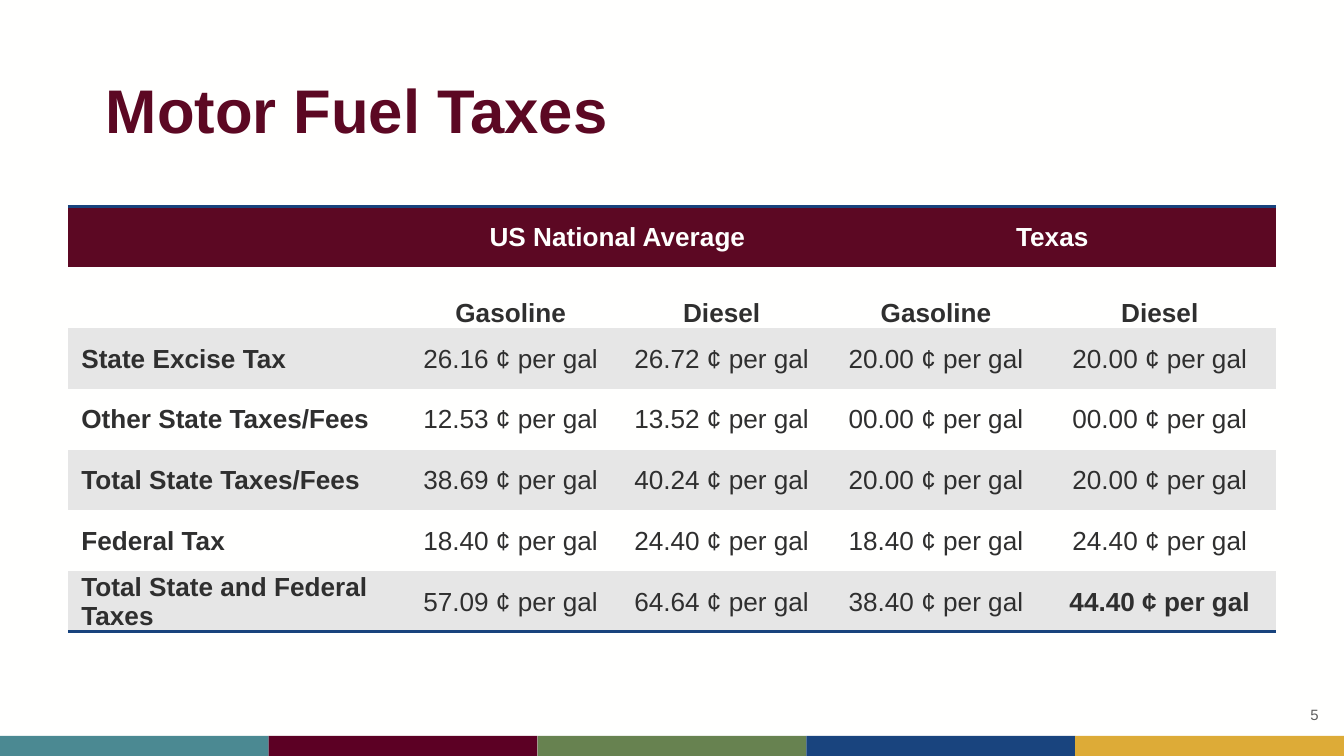
"""Build the Motor Fuel Taxes slide with its rate table and colour band."""
from dataclasses import dataclass
from typing import NamedTuple

from lxml import etree
from pptx import Presentation
from pptx.dml.color import RGBColor
from pptx.enum.shapes import MSO_SHAPE
from pptx.enum.text import MSO_ANCHOR, PP_ALIGN
from pptx.oxml.ns import qn
from pptx.slide import Slide
from pptx.table import _Cell
from pptx.text.text import TextFrame
from pptx.util import Emu, Inches, Pt

RECTANGLE = MSO_SHAPE.RECTANGLE
LEFT, CENTER, RIGHT = PP_ALIGN.LEFT, PP_ALIGN.CENTER, PP_ALIGN.RIGHT
MIDDLE, BOTTOM = MSO_ANCHOR.MIDDLE, MSO_ANCHOR.BOTTOM
WIDTH = Inches(10)
HEIGHT = Emu(WIDTH * 9 // 16)
PLAIN_TABLE = "{2D5ABB26-0587-4C30-8999-92F81FD0307C}"


@dataclass(frozen=True)
class Theme:
    font: str = "Arial"
    paper: str = "FFFFFE"
    maroon: str = "5C0823"
    ink: str = "2F2F2F"
    stripe: str = "E6E6E6"
    rule: str = "18437D"
    muted: str = "5E5E5E"
    band: tuple[str, ...] = ("4B8992", "5C0024", "678250", "19447E", "DDAB37")
    title_size: float = 33
    table_size: float = 14
    number_size: float = 8
    rule_width: float = 2


def share_of(length: int, percent: float) -> Emu:
    return Emu(round(length * percent / 100))


class Box(NamedTuple):
    """Left, top, width and height as percentages of the slide."""
    left: float
    top: float
    width: float
    height: float

    def emu(self) -> tuple[Emu, Emu, Emu, Emu]:
        return (share_of(WIDTH, self.left), share_of(HEIGHT, self.top),
                share_of(WIDTH, self.width), share_of(HEIGHT, self.height))


class TextStyle(NamedTuple):
    size: float
    color: str
    bold: bool = False
    align: PP_ALIGN = LEFT


class TaxRow(NamedTuple):
    label: str
    cents: tuple[str, ...]


THEME = Theme()
TITLE_BOX = Box(6.88, 5.33, 86.2, 19.4)
TABLE_BOX = Box(5.05, 27.35, 89.9, 56.2)
NUMBER_BOX = Box(76.6, 91.8, 22.5, 5.33)
BAND_HEIGHT = 2.67
COLUMN_SHARES = (25.2, 15.5, 15.9, 16, 17.3)
REGIONS = ("US National Average", "Texas")
FUELS = ("Gasoline", "Diesel")
TAXES = (
    TaxRow("State Excise Tax", ("26.16", "26.72", "20.00", "20.00")),
    TaxRow("Other State Taxes/Fees", ("12.53", "13.52", "00.00", "00.00")),
    TaxRow("Total State Taxes/Fees", ("38.69", "40.24", "20.00", "20.00")),
    TaxRow("Federal Tax", ("18.40", "24.40", "18.40", "24.40")),
    TaxRow("Total State and Federal Taxes", ("57.09", "64.64", "38.40", "44.40")),
)


def write(frame: TextFrame, text: str, style: TextStyle) -> None:
    paragraph = frame.paragraphs[0]
    paragraph.alignment = style.align
    run = paragraph.add_run()
    run.text = text
    run.font.name = THEME.font
    run.font.size = Pt(style.size)
    run.font.bold = style.bold
    run.font.color.rgb = RGBColor.from_string(style.color)


def fill_cell(cell: _Cell, color: str) -> None:
    cell.fill.solid()
    cell.fill.fore_color.rgb = RGBColor.from_string(color)


def write_cell(cell: _Cell, text: str, style: TextStyle,
               anchor: MSO_ANCHOR = MIDDLE) -> None:
    cell.vertical_anchor = anchor
    cell.margin_left = Inches(0.1 if style.align == LEFT else 0.01)
    cell.margin_right = cell.margin_top = Inches(0.01)
    cell.margin_bottom = 0
    write(cell.text_frame, text, style)


def rule_cell(cell: _Cell, edge: str) -> None:
    line = etree.Element(qn(f"a:{edge}"), w=str(Pt(THEME.rule_width)))
    fill = etree.SubElement(line, qn("a:solidFill"))
    etree.SubElement(fill, qn("a:srgbClr"), val=THEME.rule)
    cell._tc.get_or_add_tcPr().insert(0, line)


def draw_band(slide: Slide) -> None:
    share = 100 / len(THEME.band)
    for index, color in enumerate(THEME.band):
        box = Box(index * share, 100 - BAND_HEIGHT, share, BAND_HEIGHT)
        stripe = slide.shapes.add_shape(RECTANGLE, *box.emu())
        stripe.shadow.inherit = False
        stripe.fill.solid()
        stripe.fill.fore_color.rgb = RGBColor.from_string(color)
        stripe.line.fill.background()


def draw_title(slide: Slide) -> None:
    title = slide.shapes.title
    title.left, title.top, title.width, title.height = TITLE_BOX.emu()
    title.text_frame.vertical_anchor = MIDDLE
    write(title.text_frame, "Motor Fuel Taxes",
          TextStyle(THEME.title_size, THEME.maroon, bold=True))
    title.text_frame.paragraphs[0].line_spacing = 0.9


def draw_taxes(slide: Slide) -> None:
    row_count = len(TAXES) + 2
    frame = slide.shapes.add_table(row_count, len(COLUMN_SHARES), *TABLE_BOX.emu())
    table = frame.table
    table.first_row = table.horz_banding = False
    table._tbl.tblPr.find(qn("a:tableStyleId")).text = PLAIN_TABLE
    for column, share in zip(table.columns, COLUMN_SHARES):
        column.width = share_of(WIDTH, share)

    for row in range(row_count):
        striped = THEME.paper if row % 2 else THEME.stripe
        for column in range(len(COLUMN_SHARES)):
            cell = table.cell(row, column)
            fill_cell(cell, striped if row else THEME.maroon)
            if row == 0:
                rule_cell(cell, "lnT")
            elif row == row_count - 1:
                rule_cell(cell, "lnB")

    region_style = TextStyle(THEME.table_size, THEME.paper, True, CENTER)
    fuel_style = region_style._replace(color=THEME.ink)
    label_style = fuel_style._replace(align=LEFT)
    rate_style = fuel_style._replace(bold=False)
    for index, region in enumerate(REGIONS):
        first = 1 + index * len(FUELS)
        heading = table.cell(0, first)
        heading.merge(table.cell(0, first + len(FUELS) - 1))
        write_cell(heading, region, region_style)
        for column, fuel in enumerate(FUELS, first):
            write_cell(table.cell(1, column), fuel, fuel_style, BOTTOM)

    for row, tax in enumerate(TAXES, 2):
        write_cell(table.cell(row, 0), tax.label, label_style)
        for column, cents in enumerate(tax.cents, 1):
            is_texas_diesel_total = (row, column) == (row_count - 1, len(tax.cents))
            write_cell(table.cell(row, column), f"{cents} ¢ per gal",
                       rate_style._replace(bold=is_texas_diesel_total))


def draw_number(slide: Slide) -> None:
    number = slide.shapes.add_textbox(*NUMBER_BOX.emu()).text_frame
    number.word_wrap = True
    number.vertical_anchor = MIDDLE
    write(number, "5", TextStyle(THEME.number_size, THEME.muted, align=RIGHT))


def main() -> None:
    deck = Presentation()
    deck.slide_width, deck.slide_height = WIDTH, HEIGHT
    slide = deck.slides.add_slide(deck.slide_layouts[5])
    slide.background.fill.solid()
    slide.background.fill.fore_color.rgb = RGBColor.from_string(THEME.paper)
    draw_band(slide)
    draw_title(slide)
    draw_taxes(slide)
    draw_number(slide)
    deck.save("out.pptx")


if __name__ == "__main__":
    main()
